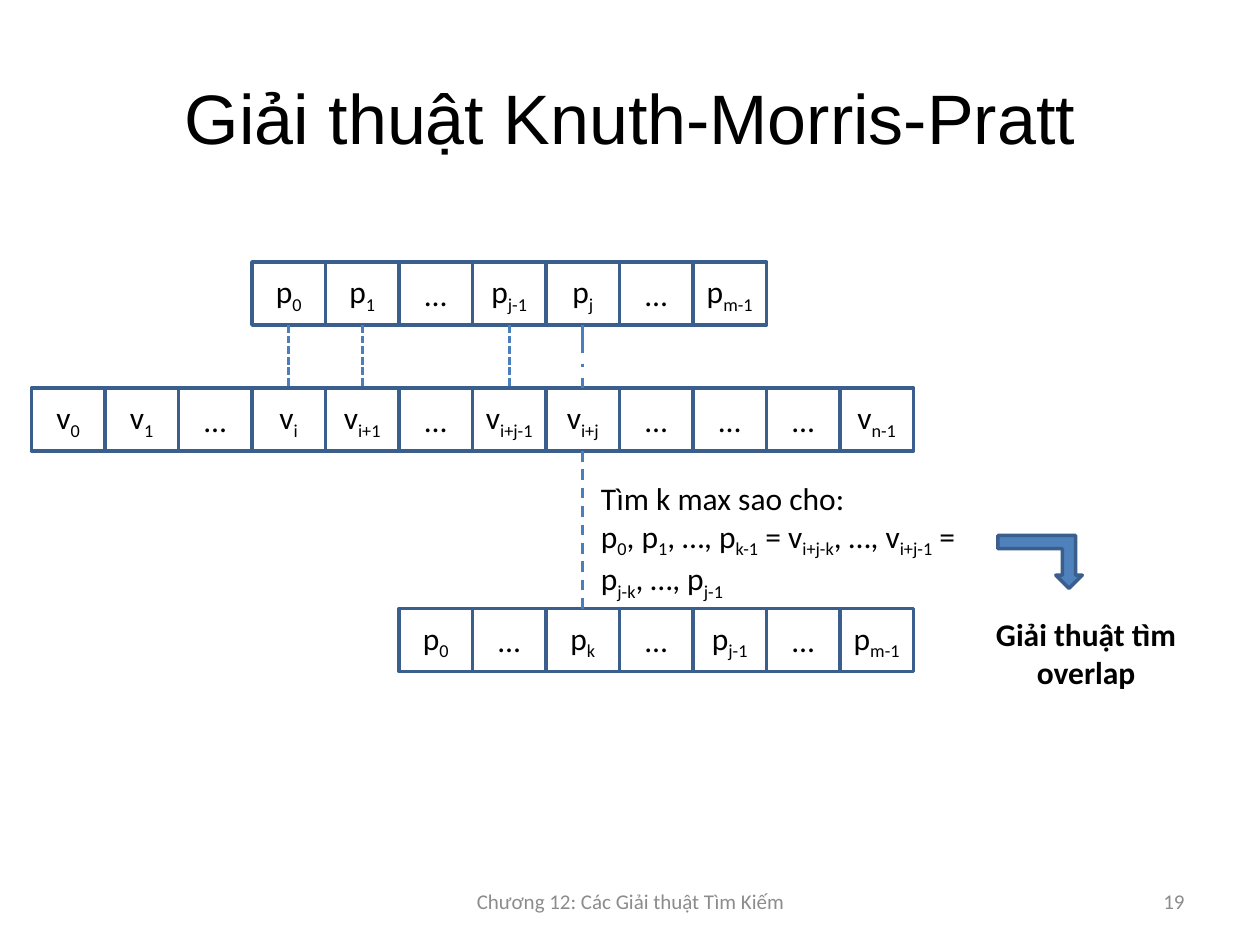
import pptx
import pptx.util
import pptx.dml.color
import pptx.enum.dml
import pptx.enum.shapes
import pptx.enum.text
import pptx.oxml.ns
import lxml.etree

Inches = pptx.util.Inches
Pt = pptx.util.Pt
RGBColor = pptx.dml.color.RGBColor
Shape = pptx.enum.shapes.MSO_SHAPE
Dash = pptx.enum.dml.MSO_LINE
Align = pptx.enum.text.PP_ALIGN
Anchor = pptx.enum.text.MSO_ANCHOR

BLACK = RGBColor(0x00, 0x00, 0x00)
GREY = RGBColor(0x8C, 0x8C, 0x8C)
OUTLINE = RGBColor(0x3A, 0x5F, 0x8C)
LINK = RGBColor(0x4B, 0x7E, 0xBC)
ARROW = RGBColor(0x4F, 0x81, 0xBD)

# Every array sits on one grid of columns
GRID_LEFT = 0.25
CELL_WIDTH = 7 / 12
CELL_HEIGHT = 0.5
PATTERN_TOP, TEXT_TOP, SHIFTED_TOP = 2.08, 3.08, 4.83


class SlideBuilder:
    def __init__(self, slide, font="Calibri", size=18):
        self.slide = slide
        self.font = font
        self.size = size

    def fill_frame(self, frame, lines, align=Align.CENTER, anchor=Anchor.MIDDLE,
                   size=None, font=None, color=BLACK, bold=False):
        """Fill a frame; pieces between underscores become subscripts."""
        frame.word_wrap = True
        frame.vertical_anchor = anchor
        for number, line in enumerate(lines):
            para = frame.add_paragraph() if number else frame.paragraphs[0]
            para.alignment = align
            for index, piece in enumerate(line.split("_")):
                if not piece:
                    continue
                span = para.add_run()
                span.text = piece
                span.font.name = font or self.font
                span.font.size = Pt(size or self.size)
                span.font.color.rgb = color
                span.font.bold = bold
                if index % 2:
                    span.font._element.set("baseline", "-25000")

    def text(self, left, top, width, height, lines, **style):
        box = self.slide.shapes.add_textbox(
            Inches(left), Inches(top), Inches(width), Inches(height))
        self.fill_frame(box.text_frame, lines, **style)

    def shape(self, kind, left, top, width, height, fill=None):
        shape = self.slide.shapes.add_shape(
            kind, Inches(left), Inches(top), Inches(width), Inches(height))
        shape.shadow.inherit = False
        if fill is None:
            shape.fill.background()
        else:
            shape.fill.solid()
            shape.fill.fore_color.rgb = fill
        shape.line.color.rgb = OUTLINE
        shape.line.width = Pt(2)
        return shape

    def array(self, first_column, top, labels):
        for column, label in enumerate(labels, first_column):
            cell = self.shape(Shape.RECTANGLE, GRID_LEFT + column * CELL_WIDTH,
                              top, CELL_WIDTH, CELL_HEIGHT)
            frame = cell.text_frame
            frame.margin_left = frame.margin_right = 0
            frame.margin_top = frame.margin_bottom = 0
            self.fill_frame(frame, [label])

    def link(self, column, upper_row, lower_row, dash, width=1.5):
        """Join two arrays through the middle of a column."""
        x = Inches(GRID_LEFT + (column + 0.5) * CELL_WIDTH)
        line = self.slide.shapes.add_connector(
            pptx.enum.shapes.MSO_CONNECTOR.STRAIGHT,
            x, Inches(upper_row + CELL_HEIGHT), x, Inches(lower_row))
        line.line.color.rgb = LINK
        line.line.width = Pt(width)
        line.line.dash_style = dash
        lxml.etree.SubElement(line._element.spPr,
                              pptx.oxml.ns.qn("a:effectLst"))

    def down_arrow(self, left, top, width, height):
        arrow = self.shape(Shape.BENT_UP_ARROW, left, top, width, height, ARROW)
        arrow._element.spPr.xfrm.set("flipV", "1")


def main():
    deck = pptx.Presentation()
    deck.slide_width, deck.slide_height = Inches(10), Inches(7.5)
    page = SlideBuilder(deck.slides.add_slide(deck.slide_layouts[6]))

    # Title and footer
    page.text(0.5, 0.3, 9, 1.25, ["Giải thuật Knuth-Morris-Pratt"],
              size=40, font="Arial")
    page.text(3.42, 6.95, 3.17, 0.4, ["Chương 12: Các Giải thuật Tìm Kiếm"],
              size=12, color=GREY)
    page.text(7.17, 6.95, 2.33, 0.4, ["19"],
              size=12, color=GREY, align=Align.RIGHT)

    # Pattern, searched text and shifted pattern
    page.array(3, PATTERN_TOP,
               ["p_0", "p_1", "…", "p_j-1", "p_j", "…", "p_m-1"])
    page.array(0, TEXT_TOP,
               ["v_0", "v_1", "…", "v_i", "v_i+1", "…", "v_i+j-1", "v_i+j",
                "…", "…", "…", "v_n-1"])
    page.array(5, SHIFTED_TOP,
               ["p_0", "…", "p_k", "…", "p_j-1", "…", "p_m-1"])

    # Matches, the mismatch and the next comparison
    for column in (3, 4, 6):
        page.link(column, PATTERN_TOP, TEXT_TOP, Dash.SQUARE_DOT)
    page.link(7, PATTERN_TOP, TEXT_TOP, Dash.LONG_DASH_DOT, width=2)
    page.link(7, TEXT_TOP, SHIFTED_TOP, Dash.DASH)

    # Condition on k and the algorithm it leads to
    page.text(4.67, 3.75, 3.17, 1.01,
              ["Tìm k max sao cho:",
               "p_0_, p_1_, …, p_k-1_ = v_i+j-k_, …, v_i+j-1_ =",
               "p_j-k_, …, p_j-1"],
              align=Align.LEFT, anchor=Anchor.TOP)
    page.text(7.58, 4.83, 2.08, 0.71, ["Giải thuật tìm overlap"],
              anchor=Anchor.TOP, bold=True)
    page.down_arrow(7.92, 4.25, 0.67, 0.42)

    deck.save("out.pptx")


if __name__ == "__main__":
    main()
